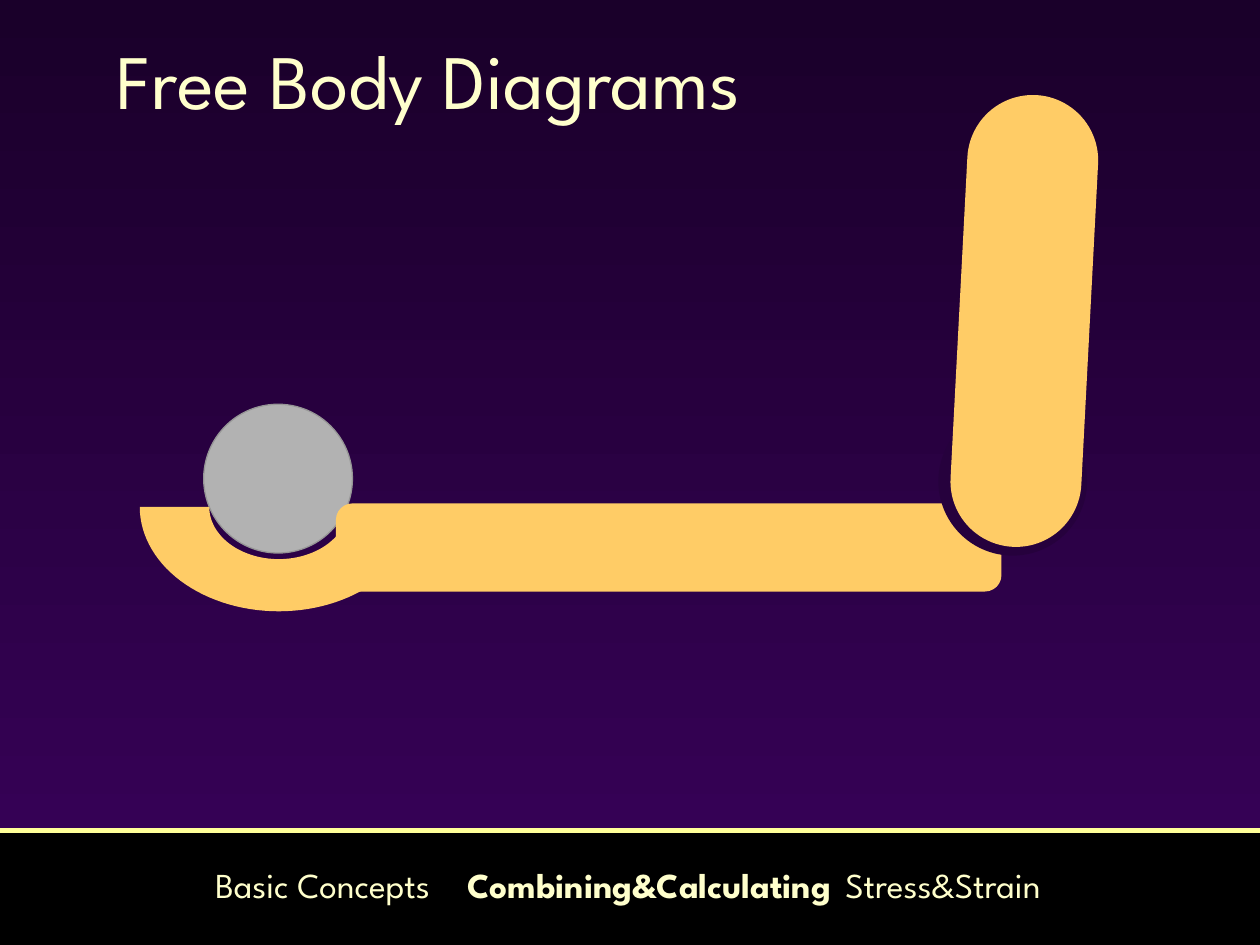
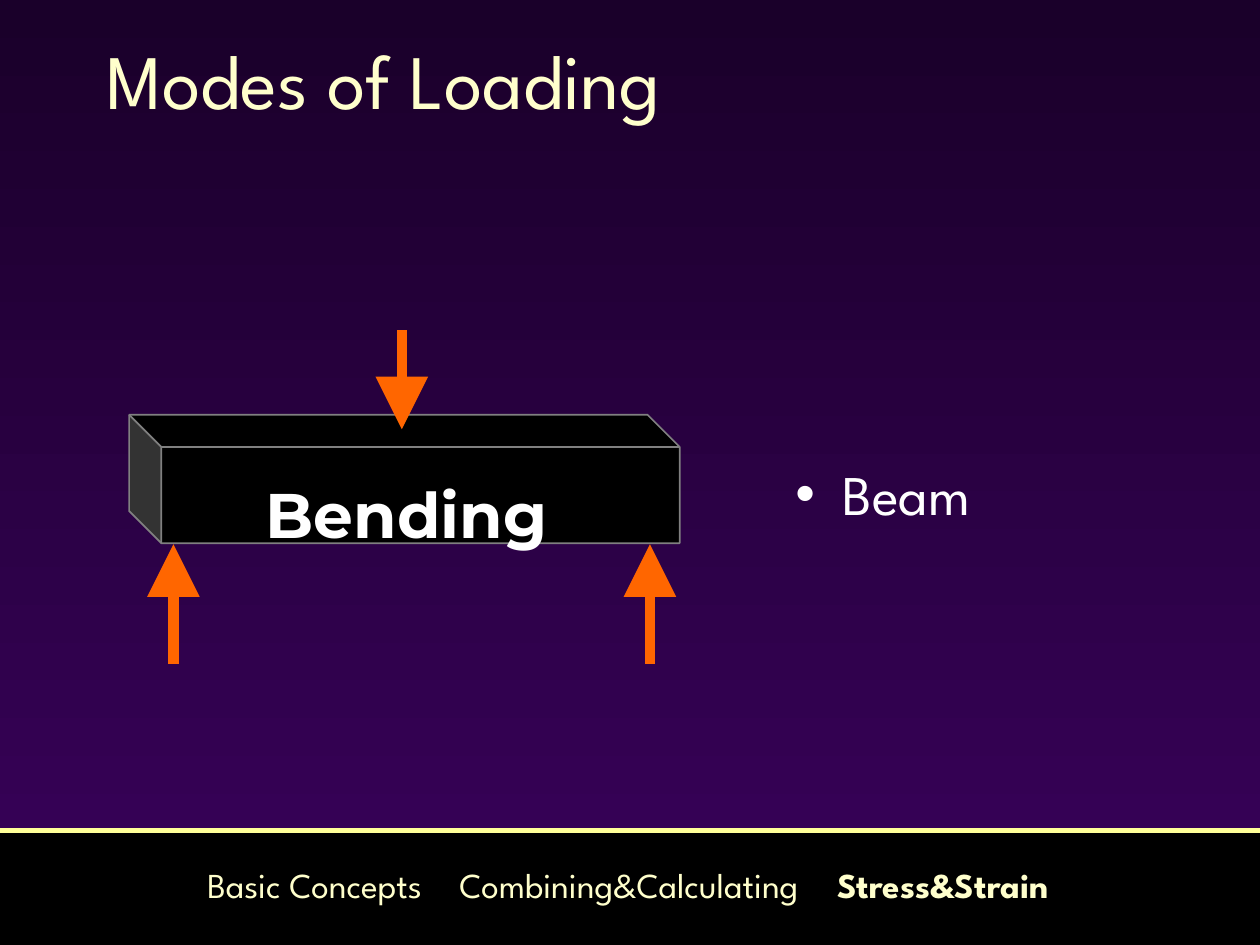
import math
import pptx
import pptx.util
import pptx.dml.color
import pptx.enum.shapes
import pptx.enum.text
import pptx.oxml.ns
import lxml.etree

Pt = pptx.util.Pt
SHAPE = pptx.enum.shapes.MSO_SHAPE
ALIGN = pptx.enum.text.PP_ALIGN
ANCHOR = pptx.enum.text.MSO_ANCHOR
qn = pptx.oxml.ns.qn

COLORS = {
    "night": "1A002A", "violet": "39015B", "cream": "FFFFCC", "rule": "FFFF99",
    "black": "000000", "white": "FFFFFF", "skin": "FFCC66", "joint": "26013D",
    "ball": "B2B2B2", "ball_edge": "969696", "beam_edge": "808080", "force": "FF6600",
}
FORMATS = {
    "title": {"name": "League Spartan", "size": Pt(44), "bold": False},
    "body": {"name": "League Spartan", "size": Pt(32), "bold": False},
    "footer": {"name": "League Spartan", "size": Pt(20), "bold": False},
    "footer_now": {"name": "League Spartan", "size": Pt(20), "bold": True},
    "label": {"name": "Montserrat", "size": Pt(36), "bold": True},
}
SECTIONS = ["Basic Concepts", "Combining&Calculating", "Stress&Strain"]

ARM = {
    "title": "Free Body Diagrams", "title_left": 59.5, "section": 1,
    "ball": (116.4, 231, 85, 85),
    "hand": {"center": (159.3, 289.7), "outer": (79.4, 59.6), "inner": (39.7, 29.8)},
    "forearm": (193.5, 289.2, 377.3, 47.3),
    "elbow": (536.2, 232.5, 85, 85),
    "upper_arm": (457.6, 147.5, 255.5, 71.8),
}
BENDING = {
    "title": "Modes of Loading", "title_left": 53.7, "section": 2,
    "beam": (194.4, 116.4, 73.4, 314.6),
    "forces": [(99.1, 379.3, 311), (371.4, 379.3, 311), (229.6, 188.6, 245.3)],
    "label": "Bending", "label_box": (132.3, 268.3, 200, 52),
    "bullets": ["Beam"], "bullet_box": (447.3, 259.2, 242, 103),
}


def rgb(name):
    return pptx.dml.color.RGBColor.from_string(COLORS[name])


def place(sp, box):
    for key, value in zip(("left", "top", "width", "height"), box):
        setattr(sp, key, Pt(value))


def add_run(p, text, fmt, color):
    r = p.add_run()
    r.text = text
    for key, value in FORMATS[fmt].items():
        setattr(r.font, key, value)
    r.font.color.rgb = rgb(color)


def paint(sp, fill, line=None, width=0.75):
    sp.shadow.inherit = False
    sp.fill.solid()
    sp.fill.fore_color.rgb = rgb(fill)
    if line:
        sp.line.color.rgb = rgb(line)
        sp.line.width = Pt(width)
    else:
        sp.line.fill.background()


def add_shape(s, kind, box, fill, line=None, width=0.75, adj=None, rotation=0):
    sp = s.shapes.add_shape(kind, *map(Pt, box))
    paint(sp, fill, line, width)
    sp.rotation = rotation
    if adj is not None:
        sp.adjustments[0] = adj
    return sp


def add_line(s, start, end, color, width, arrow=False):
    c = s.shapes.add_connector(pptx.enum.shapes.MSO_CONNECTOR.STRAIGHT,
                               *map(Pt, start + end))
    c.line.color.rgb = rgb(color)
    c.line.width = Pt(width)
    spPr = c._element.spPr
    if arrow:
        lxml.etree.SubElement(spPr.find(qn("a:ln")), qn("a:tailEnd"),
                              type="triangle", w="lg", len="lg")
    lxml.etree.SubElement(spPr, qn("a:effectLst"))


def add_text_box(s, box, wrap):
    sp = s.shapes.add_textbox(*map(Pt, box))
    tf = sp.text_frame
    tf.word_wrap = wrap
    p = tf.paragraphs[0]
    p.alignment = ALIGN.CENTER
    return p


def add_title(s, content):
    sp = s.shapes.title
    place(sp, (content["title_left"], 0, 612, 90))
    tf = sp.text_frame
    tf.auto_size = pptx.enum.text.MSO_AUTO_SIZE.NONE
    tf.vertical_anchor = ANCHOR.MIDDLE
    p = tf.paragraphs[0]
    p.alignment = ALIGN.LEFT
    add_run(p, content["title"], "title", "cream")


def add_footer(s, current):
    add_shape(s, SHAPE.RECTANGLE, (0, 476.6, 720, 63), "black", "black")
    add_line(s, (0, 474.5), (720, 474.5), "rule", 3)
    p = add_text_box(s, (37.4, 490, 643, 31), True)
    p._p.get_or_add_pPr().set("defTabSz", str(Pt(72)))
    for i, section in enumerate(SECTIONS):
        if i:
            add_run(p, "\t", "footer", "cream")
        add_run(p, section, "footer_now" if i == current else "footer", "cream")


def add_hand(s, center, outer, inner):
    def half_ellipse(radii, degrees):
        return [(Pt(center[0] + radii[0] * math.cos(math.radians(d))),
                 Pt(center[1] + radii[1] * math.sin(math.radians(d)))) for d in degrees]

    points = half_ellipse(outer, range(0, 181, 3)) + half_ellipse(inner, range(180, -1, -3))
    fb = s.shapes.build_freeform(*points[0])
    fb.add_line_segments(points[1:], close=True)
    paint(fb.convert_to_shape(), "skin")


def add_bullets(s, items, box):
    sp = s.placeholders[1]
    place(sp, box)
    tf = sp.text_frame
    tf.auto_size = pptx.enum.text.MSO_AUTO_SIZE.NONE
    for i, item in enumerate(items):
        p = tf.add_paragraph() if i else tf.paragraphs[0]
        add_run(p, item, "body", "white")


def new_slide(prs, layout, content):
    s = prs.slides.add_slide(prs.slide_layouts[layout])
    add_title(s, content)
    return s


def build_arm(prs):
    s = new_slide(prs, 5, ARM)
    add_footer(s, ARM["section"])
    add_shape(s, SHAPE.OVAL, ARM["ball"], "ball", "ball_edge")
    add_hand(s, **ARM["hand"])
    add_shape(s, SHAPE.ROUNDED_RECTANGLE, ARM["forearm"], "skin", "skin", 3, 0.167)
    add_shape(s, SHAPE.OVAL, ARM["elbow"], "joint")
    add_shape(s, SHAPE.ROUNDED_RECTANGLE, ARM["upper_arm"], "skin", "skin", 3, 0.5, 273)


def build_bending(prs):
    s = new_slide(prs, 1, BENDING)
    add_shape(s, SHAPE.CUBE, BENDING["beam"], "black", "beam_edge", 1, 0.25, 270)
    for x, start, end in BENDING["forces"]:
        add_line(s, (x, start), (x, end), "force", 6, arrow=True)
    p = add_text_box(s, BENDING["label_box"], False)
    add_run(p, BENDING["label"], "label", "white")
    add_footer(s, BENDING["section"])
    add_bullets(s, BENDING["bullets"], BENDING["bullet_box"])


def main():
    prs = pptx.Presentation()
    prs.slide_width, prs.slide_height = Pt(720), Pt(540)
    fill = prs.slide_master.background.fill
    fill.gradient()
    fill.gradient_angle = 270
    for stop, color in zip(fill.gradient_stops, ("night", "violet")):
        stop.color.rgb = rgb(color)
    build_arm(prs)
    build_bending(prs)
    prs.save("out.pptx")


if __name__ == "__main__":
    main()
